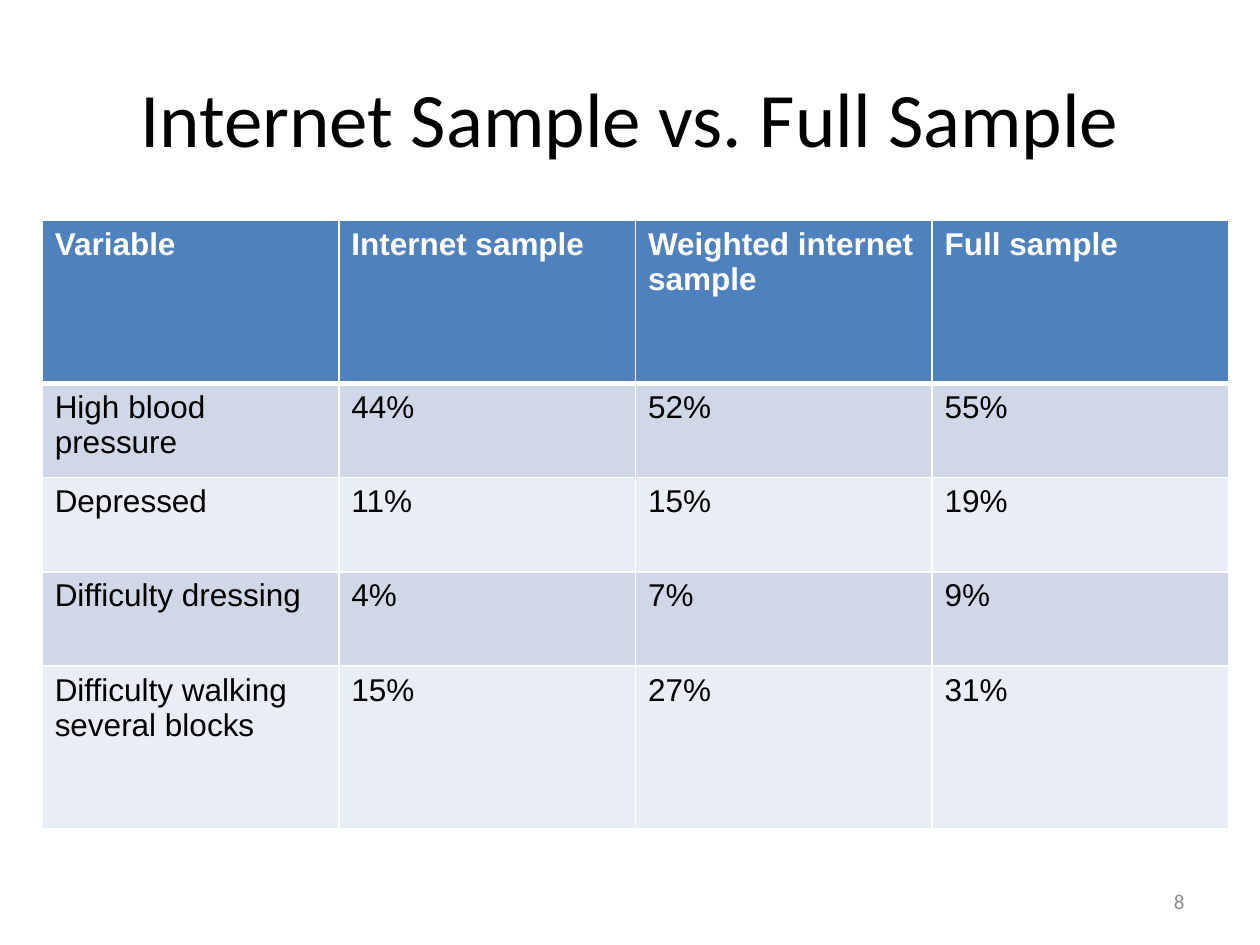
from lxml import etree
from pptx import Presentation
from pptx.dml.color import RGBColor
from pptx.enum.text import MSO_ANCHOR, PP_ALIGN
from pptx.oxml.ns import qn
from pptx.util import Cm, Pt

MIDDLE = MSO_ANCHOR.MIDDLE
LEFT, CENTER, RIGHT = PP_ALIGN.LEFT, PP_ALIGN.CENTER, PP_ALIGN.RIGHT

COLORS = {
    "text": "000000",
    "header": "4F81BD",
    "header_text": "FFFFFF",
    "odd_row": "D0D8E8",
    "even_row": "E9EDF4",
    "border": "FFFFFF",
    "page_number": "8C8C8C",
}

ROWS = [
    ["Variable", "Internet sample", "Weighted internet sample", "Full sample"],
    ["High blood pressure", "44%", "52%", "55%"],
    ["Depressed", "11%", "15%", "19%"],
    ["Difficulty dressing", "4%", "7%", "9%"],
    ["Difficulty walking several blocks", "15%", "27%", "31%"],
]
ROW_HEIGHTS = [3.28, 1.9, 1.9, 1.9, 3.28]
COLUMN_WIDTH = 5.98


class SlideBuilder:
    heading_font = "Calibri"
    table_font = "Arial"
    table_size = 18
    thin, thick = 1, 3

    def __init__(self, page):
        self.page = page

    def add_span(self, frame, text, font, size, color, align=LEFT, bold=False):
        para = frame.paragraphs[0]
        para.alignment = align
        span = para.add_run()
        span.text = text
        span.font.name = font
        span.font.size = Pt(size)
        span.font.bold = bold
        span.font.color.rgb = RGBColor.from_string(COLORS[color])

    def add_text(self, text, left, top, width, height, size, color, align):
        box = self.page.shapes.add_textbox(Cm(left), Cm(top), Cm(width), Cm(height))
        frame = box.text_frame
        frame.word_wrap = True
        frame.vertical_anchor = MIDDLE
        self.add_span(frame, text, self.heading_font, size, color, align)

    def add_borders(self, cell, top, bottom):
        properties = cell._tc.get_or_add_tcPr()
        widths = {"a:lnL": self.thin, "a:lnR": self.thin, "a:lnT": top, "a:lnB": bottom}
        for tag, width in widths.items():
            line = etree.SubElement(properties, qn(tag), w=str(Pt(width)))
            fill = etree.SubElement(line, qn("a:solidFill"))
            etree.SubElement(fill, qn("a:srgbClr"), val=COLORS["border"])

    def add_table(self, rows, left, top, column_width, row_heights):
        columns = len(rows[0])
        table = self.page.shapes.add_table(
            len(rows), columns, Cm(left), Cm(top),
            Cm(column_width * columns), Cm(sum(row_heights)),
        ).table
        for column in table.columns:
            column.width = Cm(column_width)
        for r, values in enumerate(rows):
            table.rows[r].height = Cm(row_heights[r])
            is_header = r == 0
            band = "header" if is_header else ("odd_row" if r % 2 else "even_row")
            for c, value in enumerate(values):
                cell = table.cell(r, c)
                # Borders come before the fill in the cell properties
                self.add_borders(
                    cell,
                    top=self.thick if r == 1 else self.thin,
                    bottom=self.thick if is_header else self.thin,
                )
                cell.fill.solid()
                cell.fill.fore_color.rgb = RGBColor.from_string(COLORS[band])
                self.add_span(
                    cell.text_frame, value, self.table_font, self.table_size,
                    "header_text" if is_header else "text", bold=is_header,
                )


def main():
    deck = Presentation()
    deck.slide_width, deck.slide_height = Cm(25.4), Cm(19.05)
    builder = SlideBuilder(deck.slides.add_slide(deck.slide_layouts[6]))

    # Title
    builder.add_text("Internet Sample vs. Full Sample", 1.27, 0.76, 22.86, 3.18, 44, "text", CENTER)

    # Comparison of the samples
    builder.add_table(ROWS, 0.85, 4.45, COLUMN_WIDTH, ROW_HEIGHTS)

    # Page number
    builder.add_text("8", 18.2, 17.66, 5.93, 1.01, 12, "page_number", RIGHT)

    deck.save("out.pptx")


if __name__ == "__main__":
    main()
